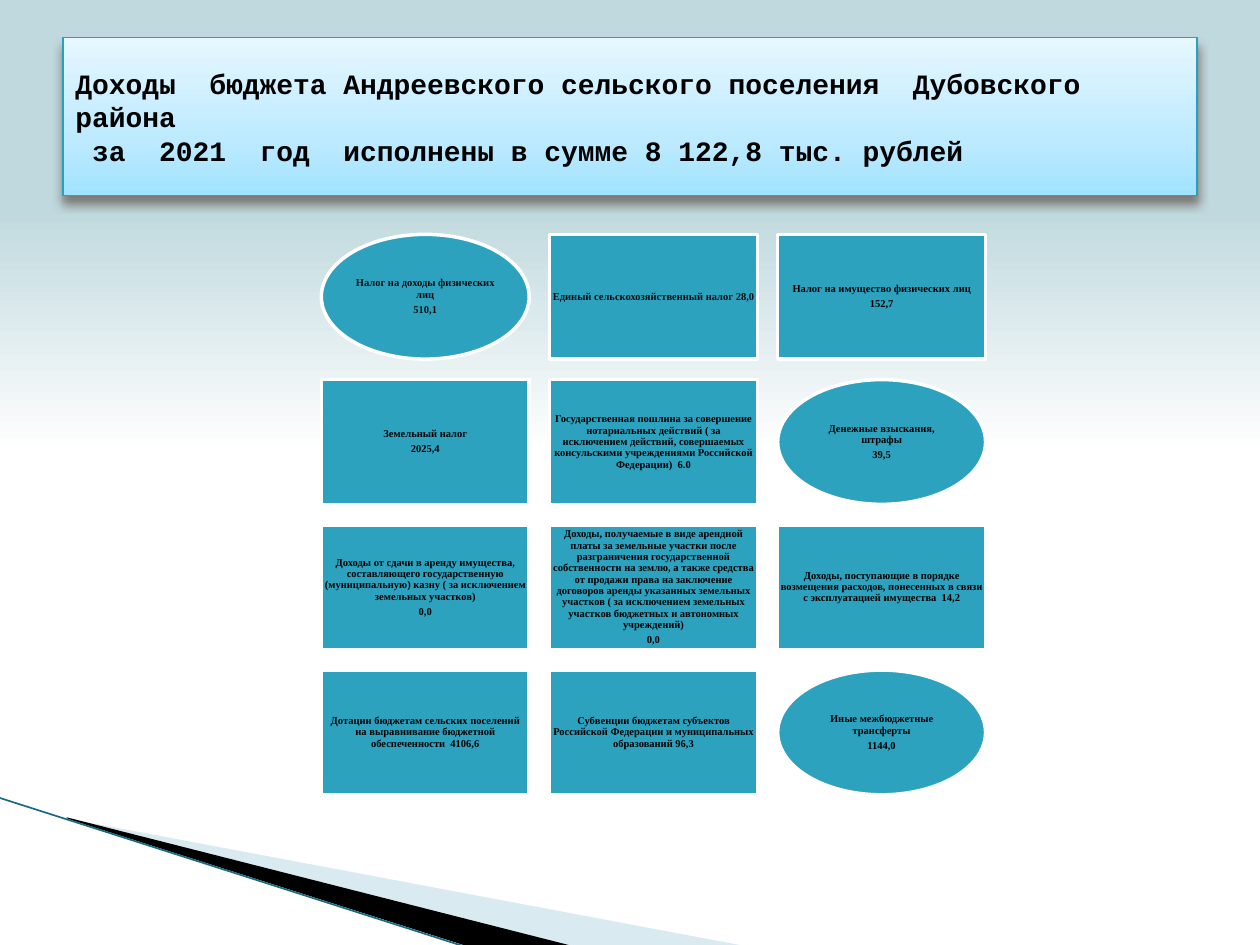
from lxml import etree
from pptx import Presentation
from pptx.dml.color import RGBColor
from pptx.enum.shapes import MSO_CONNECTOR, MSO_SHAPE
from pptx.enum.text import MSO_ANCHOR, PP_ALIGN
from pptx.oxml.ns import qn
from pptx.util import Pt

RECTANGLE, OVAL = MSO_SHAPE.RECTANGLE, MSO_SHAPE.OVAL
STRAIGHT = MSO_CONNECTOR.STRAIGHT
MIDDLE = MSO_ANCHOR.MIDDLE
LEFT, CENTER = PP_ALIGN.LEFT, PP_ALIGN.CENTER

COLORS = {
    "white": "FFFFFF", "black": "000000", "ink": "0D0D0D",
    "teal": "2DA2BF", "title_line": "28A1BE", "shadow": "4E3B30",
    "title_low": "A1E3FF", "title_mid": "BDEAFF", "title_high": "E6F7FF",
    "sky": "C0D9DE", "pale_wedge": "A0CBDC", "edge": "1A6B80",
}

TITLE = ("Доходы  бюджета Андреевского сельского поселения  Дубовского района\v"
         " за  2021  год  исполнены в сумме 8 122,8 тыс. рублей")

INCOMES = [
    (OVAL, "ink", ["Налог на доходы физических лиц", "510,1"]),
    (RECTANGLE, "ink", ["Единый сельскохозяйственный налог 28,0"]),
    (RECTANGLE, "black", ["Налог на имущество физических лиц", "152,7"]),
    (RECTANGLE, "black", ["Земельный налог", "2025,4"]),
    (RECTANGLE, "black", [
        "Государственная пошлина за совершение нотариальных действий ( за "
        "исключением действий, совершаемых консульскими учреждениями "
        "Российской Федерации)  6.0"]),
    (OVAL, "black", ["Денежные взыскания, штрафы", "39,5"]),
    (RECTANGLE, "black", [
        "Доходы от сдачи в аренду имущества, составляющего государственную "
        "(муниципальную) казну ( за исключением земельных участков)", "0,0"]),
    (RECTANGLE, "black", [
        "Доходы, получаемые в виде арендной платы за земельные участки после "
        "разграничения государственной собственности на землю, а также "
        "средства от продажи права на заключение договоров аренды указанных "
        "земельных участков ( за исключением земельных участков бюджетных и "
        "автономных учреждений)", "0,0"]),
    (RECTANGLE, "black", [
        "Доходы, поступающие в порядке возмещения расходов, понесенных в "
        "связи с эксплуатацией имущества  14,2"]),
    (RECTANGLE, "black", [
        "Дотации бюджетам сельских поселений на выравнивание бюджетной "
        "обеспеченности  4106,6"]),
    (RECTANGLE, "black", [
        "Субвенции бюджетам субъектов Российской Федерации и муниципальных "
        "образований 96,3"]),
    (OVAL, "black", ["Иные межбюджетные трансферты", "1144,0"]),
]

COLUMNS = 3
GRID_LEFT, GRID_TOP = 183.6, 133.9
CELL_WIDTH, CELL_HEIGHT = 118.8, 71.3
COLUMN_STEP, ROW_STEP = 130.4, 83


def rgb(name):
    return RGBColor.from_string(COLORS[name])


def add_color(parent, name, alpha=None):
    color = etree.SubElement(parent, qn("a:srgbClr"), val=COLORS[name])
    if alpha is not None:
        etree.SubElement(color, qn("a:alpha"), val=str(alpha * 1000))


def set_rising_gradient(fill, element, stops):
    fill.gradient()
    fill.gradient_angle = 90
    stop_list = next(element.iter(qn("a:gsLst")))
    for stop in list(stop_list):
        stop_list.remove(stop)
    for position, name in stops:
        stop = etree.SubElement(stop_list, qn("a:gs"), pos=str(position * 1000))
        add_color(stop, name)


def write_text(shape, lines, *, font, size, color, align, inset=None,
               spacing=None, after=None):
    frame = shape.text_frame
    frame.word_wrap = True
    frame.vertical_anchor = MIDDLE
    if inset is not None:
        frame.margin_left = frame.margin_right = Pt(inset)
        frame.margin_top = frame.margin_bottom = Pt(inset)
    for index, line in enumerate(lines):
        paragraph = frame.add_paragraph() if index else frame.paragraphs[0]
        paragraph.text = line
        paragraph.alignment = align
        if spacing is not None:
            paragraph.line_spacing = spacing
        if after is not None:
            paragraph.space_after = Pt(after)
        for run in paragraph.runs:
            run.font.name = font
            run.font.size = Pt(size)
            run.font.bold = True
            run.font.color.rgb = rgb(color)


def add_box(slide, kind, left, top, width, height, line, line_width):
    shape = slide.shapes.add_shape(kind, Pt(left), Pt(top), Pt(width), Pt(height))
    shape.shadow.inherit = False
    shape.line.color.rgb = rgb(line)
    shape.line.width = Pt(line_width)
    return shape


def add_wedge(slide, points, color, alpha=None):
    builder = slide.shapes.build_freeform(*points[0], scale=Pt(1))
    builder.add_line_segments(points[1:], close=True)
    shape = builder.convert_to_shape()
    shape.shadow.inherit = False
    shape.line.fill.background()
    shape.fill.solid()
    shape.fill.fore_color.rgb = rgb(color)
    if alpha is not None:
        solid = shape.element.spPr.find(qn("a:solidFill"))
        solid.remove(solid[0])
        add_color(solid, color, alpha)


def add_edge(slide, start, end):
    edge = slide.shapes.add_connector(
        STRAIGHT, Pt(start[0]), Pt(start[1]), Pt(end[0]), Pt(end[1]))
    edge.line.color.rgb = rgb("edge")
    edge.line.width = Pt(0.95)
    etree.SubElement(edge.element.spPr, qn("a:effectLst"))


def add_title(slide):
    title = add_box(slide, RECTANGLE, 36, 21.6, 648, 90, "title_line", 0.75)
    set_rising_gradient(title.fill, title.element, [
        (0, "title_low"), (35, "title_mid"), (100, "title_high")])
    effects = title.element.spPr.find(qn("a:effectLst"))
    shadow = etree.SubElement(
        effects, qn("a:outerShdw"), blurRad=str(Pt(6)), dist=str(Pt(4)),
        dir="5400000", rotWithShape="0")
    add_color(shadow, "shadow", 60)
    write_text(title, [TITLE], font="Courier New", size=16, color="black",
               align=LEFT)


def add_income(slide, index, kind, color, lines):
    row, column = divmod(index, COLUMNS)
    box = add_box(slide, kind, GRID_LEFT + column * COLUMN_STEP,
                  GRID_TOP + row * ROW_STEP, CELL_WIDTH, CELL_HEIGHT, "white", 2)
    box.fill.solid()
    box.fill.fore_color.rgb = rgb("teal")
    write_text(box, lines, font="Times New Roman", size=6, color=color,
               align=CENTER, inset=1.8, spacing=0.9, after=2.1)


def main():
    presentation = Presentation()
    presentation.slide_width, presentation.slide_height = Pt(720), Pt(540)
    slide = presentation.slides.add_slide(presentation.slide_layouts[6])
    set_rising_gradient(slide.background.fill, slide.element, [
        (0, "white"), (52, "white"), (78, "sky"), (100, "sky")])
    add_wedge(slide, [(39.6, 468.4), (428.4, 540.7), (328.3, 540.7), (39.6, 468)],
              "pale_wedge", 40)
    add_wedge(slide, [(38.2, 467.3), (329, 540.7), (267.8, 541.4), (38.9, 468)],
              "black")
    add_edge(slide, (-0.7, 455.8), (267.1, 541.4))
    add_title(slide)
    for index, (kind, color, lines) in enumerate(INCOMES):
        add_income(slide, index, kind, color, lines)
    presentation.save("out.pptx")


if __name__ == "__main__":
    main()
